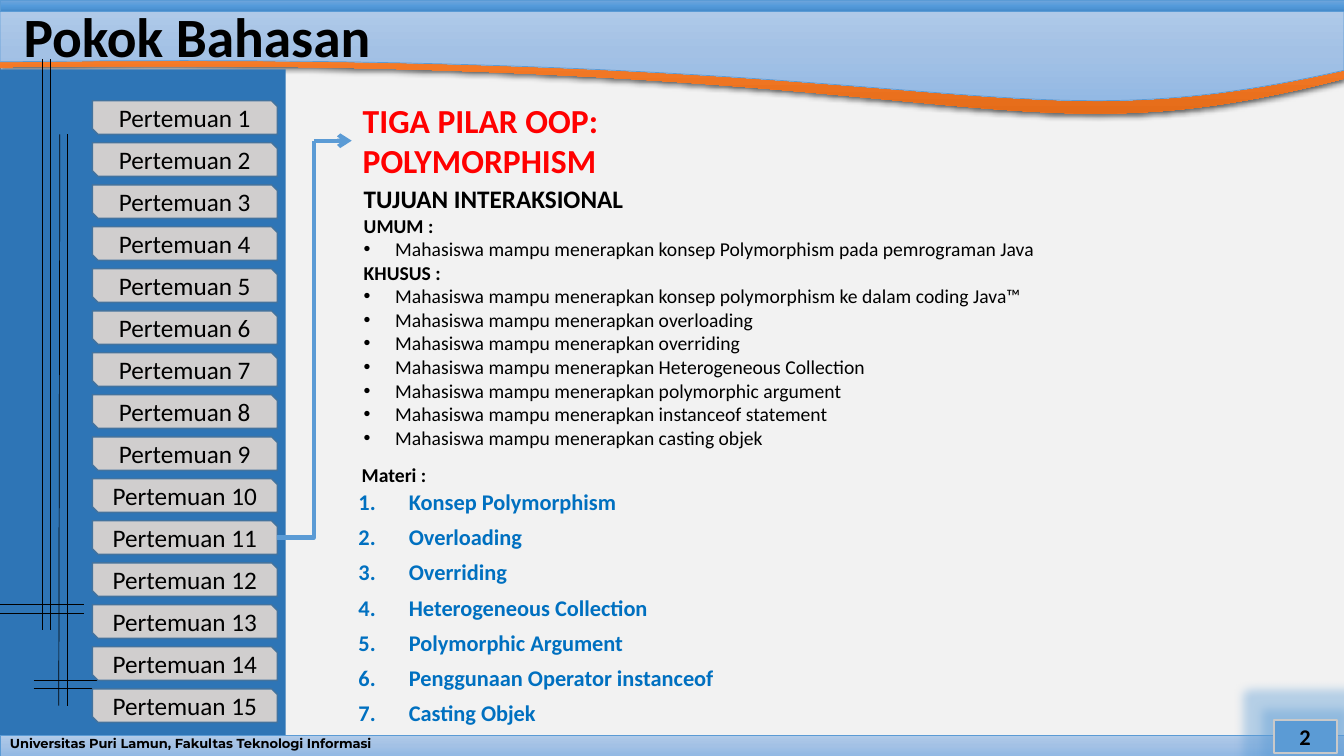
from copy import deepcopy
from dataclasses import dataclass

from lxml.etree import SubElement
from pptx import Presentation
from pptx.dml.color import RGBColor
from pptx.enum.shapes import MSO_CONNECTOR, MSO_SHAPE
from pptx.enum.text import MSO_ANCHOR, PP_ALIGN
from pptx.oxml.ns import qn
from pptx.util import Pt

PX = 9525  # EMU in one px; the page is 1280 by 720 px


@dataclass(frozen=True)
class Theme:
    font: str = "Calibri"
    footer_font: str = "Montserrat"
    black: str = "000000"
    red: str = "FF0000"
    topic: str = "0070C0"
    accent: str = "5B9BD5"
    sidebar: str = "2E75B6"
    paper: str = "F2F2F2"
    paper_edge: str = "A5A5A5"
    button: str = "D0CECE"
    button_edge: str = "43739E"
    badge_edge: str = "C9C9C9"
    orange: tuple = ("F18C57", "F67B28", "E56C19")
    sky: tuple = ("B1CBE9", "A3C1E5", "93B9E4")
    band: tuple = ("71A6DB", "559BDB", "448ACA")
    title: float = 39.6
    heading: float = 24
    subheading: float = 18
    number: float = 16
    body: float = 14
    footer: float = 9.3


THEME = Theme()

SESSION_COUNT = 15
GENERAL_GOALS = ["Mahasiswa mampu menerapkan konsep Polymorphism pada pemrograman Java"]
SPECIFIC_GOALS = [
    "Mahasiswa mampu menerapkan konsep polymorphism ke dalam coding Java™",
    "Mahasiswa mampu menerapkan overloading",
    "Mahasiswa mampu menerapkan overriding",
    "Mahasiswa mampu menerapkan Heterogeneous Collection",
    "Mahasiswa mampu menerapkan polymorphic argument",
    "Mahasiswa mampu menerapkan instanceof statement",
    "Mahasiswa mampu menerapkan casting objek",
]
TOPICS = [
    "Konsep Polymorphism", "Overloading", "Overriding", "Heterogeneous Collection",
    "Polymorphic Argument", "Penggunaan Operator instanceof", "Casting Objek",
]
GUIDE_LINES = [
    (40, 56, 40, 600), (48, 56, 48, 600), (57, 128, 56, 672), (64, 128, 64, 672),
    (32, 648, 144, 648), (32, 656, 144, 656), (0, 584, 80, 584), (0, 576, 80, 576),
]


def emu(*lengths):
    return [round(length * PX) for length in lengths]


def paint(shape, fill, line=None, width=0.5):
    """Fill with one colour, or with a downward gradient for a tuple of colours."""
    shape.shadow.inherit = False
    if isinstance(fill, tuple):
        shape.fill.gradient()
        shape.fill.gradient_angle = 270
        stop_list = shape._element.spPr.find(".//" + qn("a:gsLst"))
        stop_list.insert(1, deepcopy(stop_list[0]))
        for index, (stop, color) in enumerate(zip(shape.fill.gradient_stops, fill)):
            stop.color.rgb = RGBColor.from_string(color)
            stop.position = index / (len(fill) - 1)
    else:
        shape.fill.solid()
        shape.fill.fore_color.rgb = RGBColor.from_string(fill)
    if line:
        shape.line.color.rgb = RGBColor.from_string(line)
        shape.line.width = Pt(width)
    else:
        shape.line.fill.background()


def add_effect(shape, kind, color, alpha, **settings):
    effects = shape._element.spPr.find(qn("a:effectLst"))
    effect = SubElement(effects, qn(f"a:{kind}"), {k: str(v) for k, v in settings.items()})
    tint = SubElement(effect, qn("a:srgbClr"), val=color)
    SubElement(tint, qn("a:alpha"), val=str(alpha * 1000))


def add_panel(page, bounds, fill, line=None, width=0.5, kind=MSO_SHAPE.RECTANGLE):
    panel = page.shapes.add_shape(kind, *emu(*bounds))
    paint(panel, fill, line, width)
    return panel


def add_wave(page, top, left_end, pull_a, pull_b, right_end, fill, line=None):
    """Draw a full-width band whose lower edge is a cubic curve."""
    anchors = (left_end, pull_a, pull_b, right_end)
    steps = 60
    curve = []
    for step in range(steps + 1):
        t = step / steps
        weights = ((1 - t) ** 3, 3 * t * (1 - t) ** 2, 3 * t * t * (1 - t), t ** 3)
        curve.append(emu(*(sum(w * p[axis] for w, p in zip(weights, anchors))
                           for axis in (0, 1))))
    builder = page.shapes.build_freeform(*emu(1280, top))
    builder.add_line_segments([emu(0, top)] + curve, close=True)
    wave = builder.convert_to_shape()
    paint(wave, fill, line)
    return wave


def add_line(page, ends, color, width, kind=MSO_CONNECTOR.STRAIGHT):
    line = page.shapes.add_connector(kind, *emu(*ends))
    line.line.color.rgb = RGBColor.from_string(color)
    line.line.width = Pt(width)
    SubElement(line._element.spPr, qn("a:effectLst"))
    return line


def add_box(page, bounds, anchor=MSO_ANCHOR.TOP):
    box = page.shapes.add_textbox(*emu(*bounds))
    box.text_frame.word_wrap = True
    box.text_frame.vertical_anchor = anchor
    return box


def add_para(box, text, size, color=THEME.black, bold=True, font=THEME.font,
             align=PP_ALIGN.LEFT, before=0, spacing=1.0, bullet=None, indent=0):
    """Append a paragraph; bullet is a character or "1." for numbering."""
    frame = box.text_frame
    para = frame.paragraphs[0]
    if para.runs:
        para = frame.add_paragraph()
    para.alignment = align
    para.space_before = Pt(before)
    para.line_spacing = spacing
    if bullet:
        props = para._p.get_or_add_pPr()
        hang = indent * PX
        props.set("marL", str(hang))
        props.set("indent", str(-hang))
        if bullet == "1.":
            SubElement(props, qn("a:buAutoNum"), type="arabicPeriod")
        else:
            SubElement(props, qn("a:buFont"), typeface="Arial")
            SubElement(props, qn("a:buChar"), char=bullet)
    span = para.add_run()
    span.text = text
    span.font.size = Pt(size)
    span.font.bold = bold
    span.font.name = font
    span.font.color.rgb = RGBColor.from_string(color)


def add_backdrop(page):
    add_panel(page, (0, 4, 1280, 716), THEME.paper, THEME.paper_edge)
    orange = add_wave(page, 1, (0, 64), (937, 51), (947, 161), (1280, 75), THEME.orange)
    add_effect(orange, "outerShdw", THEME.black, 63,
               blurRad=Pt(4.5), dist=Pt(1.5), dir=5400000, rotWithShape=0)
    add_wave(page, 4, (0, 59), (937, 46), (947, 142), (1280, 67), THEME.sky, THEME.accent)
    add_panel(page, (0, 700, 1280, 20), THEME.sky, THEME.accent)
    add_panel(page, (0, 0, 1280, 11), THEME.band, THEME.accent)
    footer = add_box(page, (0, 700, 1280, 20), MSO_ANCHOR.MIDDLE)
    add_para(footer, "Universitas Puri Lamun, Fakultas Teknologi Informasi", THEME.footer,
             font=THEME.footer_font, spacing=0.7)
    badge = add_panel(page, (1213, 686, 60, 31), THEME.accent, THEME.badge_edge, 1.5)
    add_effect(badge, "glow", THEME.accent, 40, rad=Pt(14))
    badge.text_frame.vertical_anchor = MSO_ANCHOR.MIDDLE
    add_para(badge, "2", THEME.number, align=PP_ALIGN.CENTER)


def add_sidebar(page):
    add_panel(page, (0, 66, 272, 634), THEME.sidebar)
    for ends in GUIDE_LINES:
        add_line(page, ends, THEME.black, 0.5)
    for index in range(SESSION_COUNT):
        button = add_panel(page, (88, 96 + 40 * index, 176, 32), THEME.button,
                           THEME.button_edge, 1, MSO_SHAPE.SNIP_2_DIAG_RECTANGLE)
        button.text_frame.vertical_anchor = MSO_ANCHOR.MIDDLE
        add_para(button, f"Pertemuan {index + 1}", THEME.subheading, bold=False,
                 align=PP_ALIGN.CENTER)


def add_session_arrow(page):
    elbow = add_line(page, (264, 512, 299, 134), THEME.accent, 3, MSO_CONNECTOR.ELBOW)
    elbow._element.spPr.find(qn("a:prstGeom")).set("prst", "bentConnector2")
    arrow = add_line(page, (299, 134, 335, 134), THEME.accent, 3)
    SubElement(arrow.line._get_or_add_ln(), qn("a:tailEnd"), type="arrow")


def add_session(page):
    heading = add_box(page, (336, 90, 698, 87))
    for text in ("TIGA PILAR OOP:", "POLYMORPHISM"):
        add_para(heading, text, THEME.heading, THEME.red)
    topics = add_box(page, (332, 460, 616, 239))
    for topic in TOPICS:
        add_para(topics, topic, THEME.number, THEME.topic, before=6, bullet="1.", indent=48)
    goals = add_box(page, (337, 170, 668, 265))
    add_para(goals, "TUJUAN INTERAKSIONAL", THEME.subheading)
    for label, items in (("UMUM :", GENERAL_GOALS), ("KHUSUS :", SPECIFIC_GOALS)):
        add_para(goals, label, THEME.body)
        for item in items:
            add_para(goals, item, THEME.body, bold=False, bullet="•", indent=30)
    add_para(add_box(page, (335, 436, 82, 33)), "Materi :", THEME.body)


def main():
    deck = Presentation()
    deck.slide_width, deck.slide_height = emu(1280, 720)
    page = deck.slides.add_slide(deck.slide_layouts[6])
    add_backdrop(page)
    title = add_box(page, (13, 8, 1218, 59), MSO_ANCHOR.MIDDLE)
    add_para(title, "Pokok Bahasan", THEME.title, spacing=0.9)
    add_sidebar(page)
    add_session_arrow(page)
    add_session(page)
    deck.save("out.pptx")


if __name__ == "__main__":
    main()
